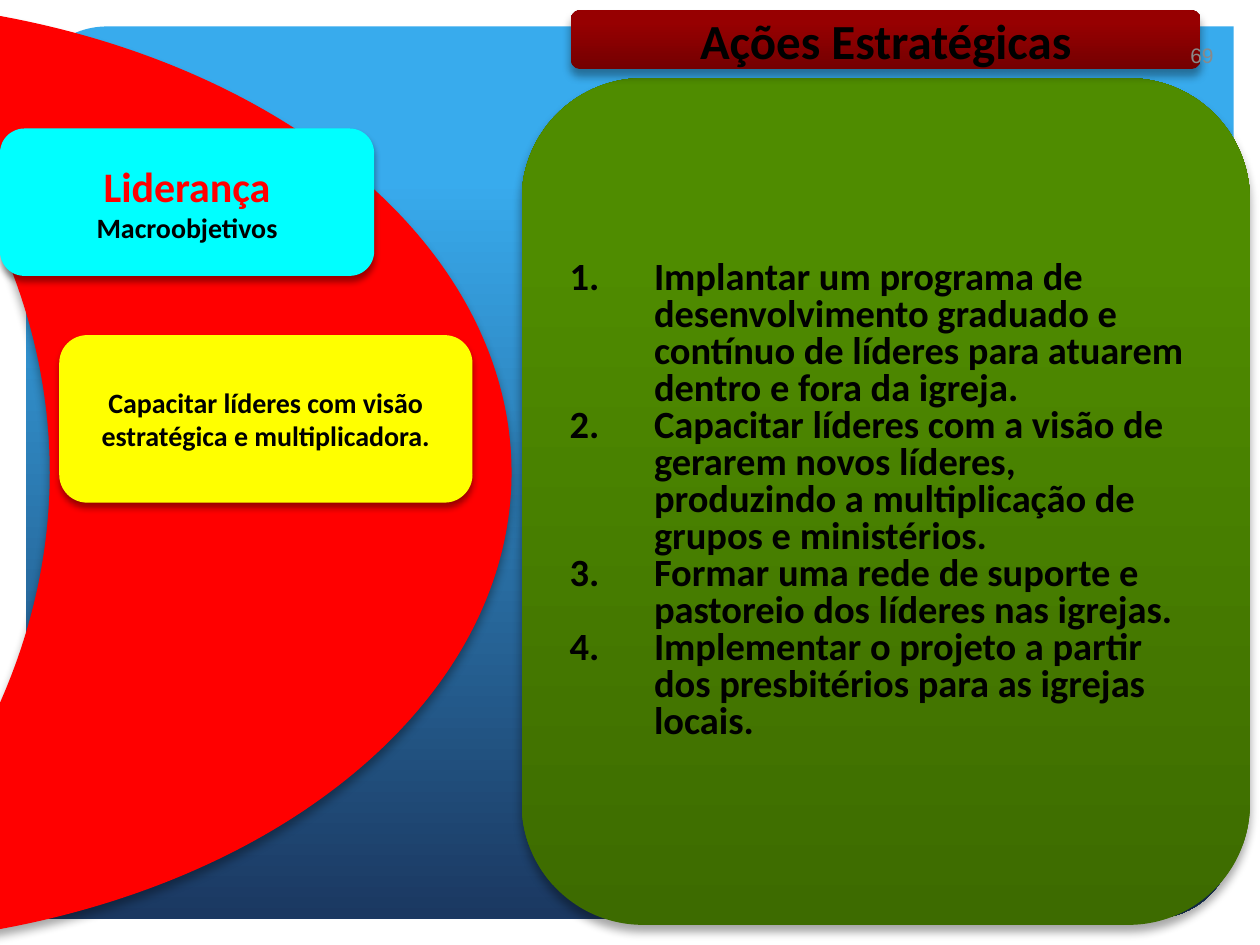
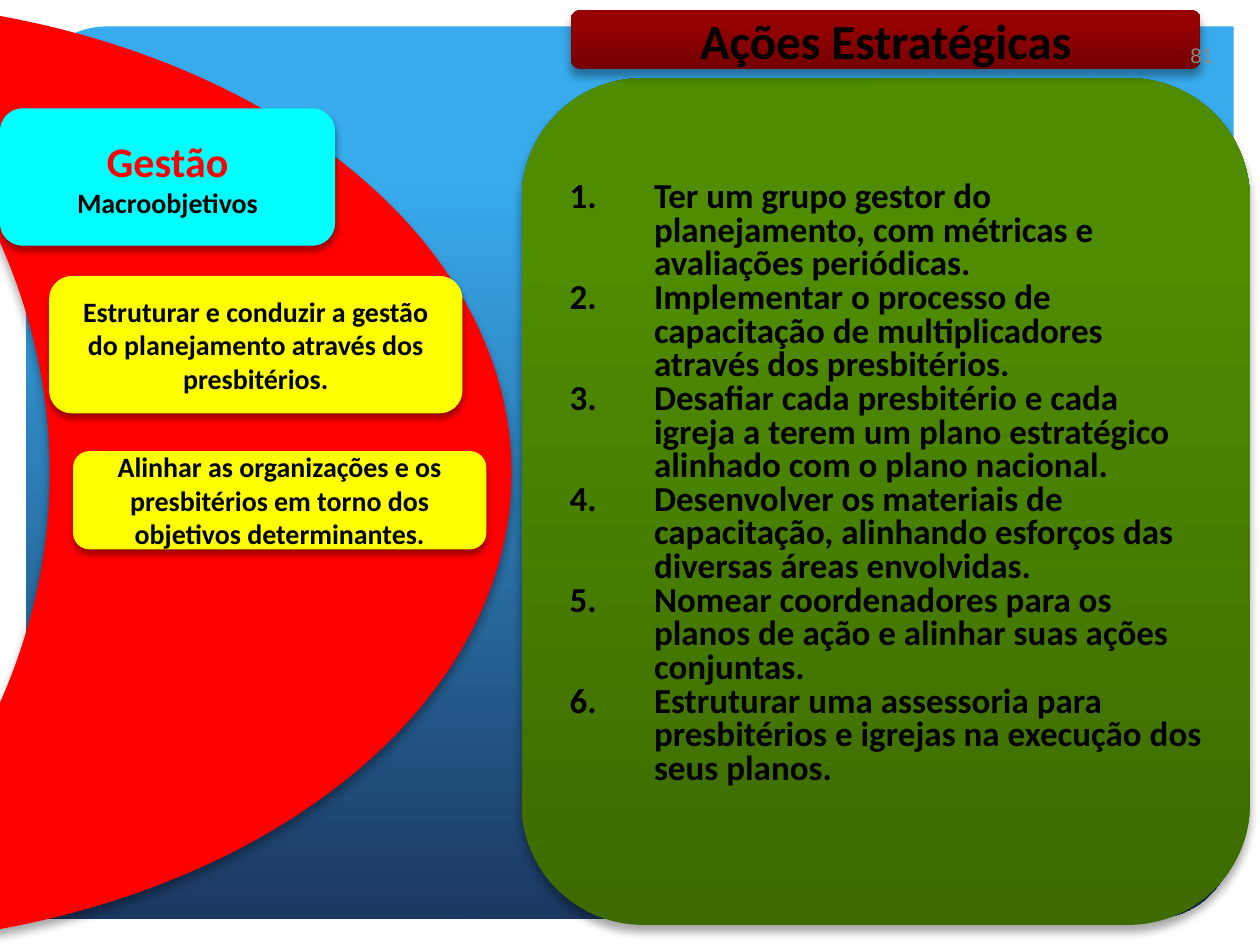
from lxml import etree
from pptx import Presentation
from pptx import util as u
from pptx.dml.color import RGBColor
from pptx.enum import shapes, text
from pptx.oxml.ns import qn

# Each slide: page number, theme box, goal boxes (left, top, width, height) and actions
SLIDES = [
    dict(
        page="69", theme="Liderança", theme_box=(0, 1.02, 2.97, 1.17),
        goals=[("Capacitar líderes com visão estratégica e multiplicadora.", (0.47, 2.66, 3.28, 1.33))],
        action_size=22, spare_bottom=0,
        actions=[
            "Implantar um programa de desenvolvimento graduado e contínuo de líderes para atuarem dentro e fora da igreja.",
            "Capacitar líderes com a visão de gerarem novos líderes, produzindo a multiplicação de grupos e ministérios.",
            "Formar uma rede de suporte e pastoreio dos líderes nas igrejas.",
            "Implementar o projeto a partir dos presbitérios para as igrejas locais.",
        ],
    ),
    dict(
        page="81", theme="Gestão", theme_box=(0, 0.86, 2.66, 1.09),
        goals=[
            ("Estruturar e conduzir a gestão do planejamento através dos presbitérios.", (0.39, 2.19, 3.28, 1.09)),
            ("Alinhar as organizações e os presbitérios em torno dos objetivos determinantes.", (0.58, 3.58, 3.28, 0.78)),
        ],
        action_size=20, spare_bottom=0.27,
        actions=[
            "Ter um grupo gestor do planejamento, com métricas e avaliações periódicas.",
            "Implementar o processo de capacitação de multiplicadores através dos presbitérios.",
            "Desafiar cada presbitério e cada igreja a terem um plano estratégico alinhado com o plano nacional.",
            "Desenvolver os materiais de capacitação, alinhando esforços das diversas áreas envolvidas.",
            "Nomear coordenadores para os planos de ação e alinhar suas ações conjuntas.",
            "Estruturar uma assessoria para presbitérios e igrejas na execução dos seus planos.",
        ],
    ),
]
HEADING = "Ações Estratégicas"
SUBHEADING = "Macroobjetivos"

WIDTH, HEIGHT = 10, 7.5
MARGIN = 0.21
INDENT = 0.67
BLACK = RGBColor(0x00, 0x00, 0x00)
RED = RGBColor(0xFF, 0x00, 0x00)
CYAN = RGBColor(0x00, 0xFF, 0xFF)
YELLOW = RGBColor(0xFF, 0xFF, 0x00)
GREY = RGBColor(0x89, 0x89, 0x89)
SKY, NAVY = RGBColor(0x38, 0xAB, 0xED), RGBColor(0x1B, 0x38, 0x61)
DARK_GREEN, GREEN = RGBColor(0x3D, 0x6B, 0x00), RGBColor(0x4F, 0x8C, 0x00)
DARK_WINE, WINE = RGBColor(0x74, 0x00, 0x01), RGBColor(0x97, 0x00, 0x01)

# Gradients: two (share, colour) stops and a counter-clockwise angle
BLUE_FADE = ((0.17, SKY), (1, NAVY), 270)
GREEN_FADE = ((0, DARK_GREEN), (0.8, GREEN), 90)
WINE_FADE = ((0, DARK_WINE), (0.8, WINE), 90)
# Shadows: opacity in percent, blur and distance in points
DEEP, SOFT = (35, 5, 4), (40, 4, 3)


def add_shadow(sp, opacity, blur, distance):
    effects = sp._element.spPr.find(qn("a:effectLst"))
    outer = etree.SubElement(effects, qn("a:outerShdw"), blurRad=str(u.Pt(blur)),
                             dist=str(u.Pt(distance)), dir="5400000", rotWithShape="0")
    color = etree.SubElement(outer, qn("a:srgbClr"), val=str(BLACK))
    etree.SubElement(color, qn("a:alpha"), val=str(opacity * 1000))


def add_box(s, kind, box, fill, shadow=None):
    """Add a borderless shape; fill is a colour or a gradient tuple."""
    sp = s.shapes.add_shape(kind, *map(u.Inches, box))
    sp.shadow.inherit = False
    sp.line.fill.background()
    if isinstance(fill, RGBColor):
        sp.fill.solid()
        sp.fill.fore_color.rgb = fill
    else:
        *stops, angle = fill
        sp.fill.gradient()
        sp.fill.gradient_angle = angle
        for stop, (position, color) in zip(sp.fill.gradient_stops, stops):
            stop.position, stop.color.rgb = position, color
    if shadow:
        add_shadow(sp, *shadow)
    return sp


def add_text(sp, content, size=16, color=BLACK, bold=True, font="Calibri",
             align=text.PP_ALIGN.CENTER, numbered=False):
    """Write one paragraph, after any that the shape already holds."""
    tf = sp.text_frame
    tf.word_wrap = True
    tf.vertical_anchor = text.MSO_ANCHOR.MIDDLE
    p = tf.add_paragraph() if tf.text else tf.paragraphs[0]
    p.alignment = align
    if numbered:
        p.line_spacing = 0.8
        pPr = p._p.get_or_add_pPr()
        pPr.set("marL", str(u.Inches(INDENT)))
        pPr.set("indent", str(-u.Inches(INDENT)))
        etree.SubElement(pPr, qn("a:buFont"), typeface="+mj-lt")
        etree.SubElement(pPr, qn("a:buAutoNum"), type="arabicPeriod")
    r = p.add_run()
    r.text = content
    r.font.size, r.font.name, r.font.bold = u.Pt(size), font, bold
    r.font.color.rgb = color


def add_backdrop(s):
    kind = shapes.MSO_SHAPE
    panel = add_box(s, kind.ROUND_2_DIAG_RECTANGLE,
                    (MARGIN, MARGIN, WIDTH - 2 * MARGIN, HEIGHT - 2 * MARGIN), BLUE_FADE)
    panel.adjustments[0] = 0.09
    moon = add_box(s, kind.MOON, (-1.41, 0, 5.47, HEIGHT), RED, DEEP)
    moon.rotation = 180
    moon.adjustments[0] = 0.67


def build_slide(prs, data):
    s = prs.slides.add_slide(prs.slide_layouts[6])
    rounded = shapes.MSO_SHAPE.ROUNDED_RECTANGLE
    add_backdrop(s)

    actions = add_box(s, rounded, (4.14, 0.62, 5.78, 6.72), GREEN_FADE, DEEP)
    actions.text_frame.margin_bottom = u.Inches(0.05 + data["spare_bottom"])
    for action in data["actions"]:
        add_text(actions, action, size=data["action_size"],
                 align=text.PP_ALIGN.LEFT, numbered=True)

    heading = add_box(s, rounded, (4.53, 0.08, 5, 0.47), WINE_FADE, DEEP)
    add_text(heading, HEADING, size=28)

    theme = add_box(s, rounded, data["theme_box"], CYAN, SOFT)
    add_text(theme, data["theme"], size=24, color=RED)
    add_text(theme, SUBHEADING)

    for goal, box in data["goals"]:
        add_text(add_box(s, rounded, box, YELLOW, SOFT), goal)

    page = s.shapes.add_textbox(*map(u.Inches, (9.19, 0.24, 0.54, 0.4)))
    add_text(page, data["page"], size=12, color=GREY, bold=False, font="Arial",
             align=text.PP_ALIGN.RIGHT)


def main():
    prs = Presentation()
    prs.slide_width, prs.slide_height = u.Inches(WIDTH), u.Inches(HEIGHT)
    for data in SLIDES:
        build_slide(prs, data)
    prs.save("out.pptx")


if __name__ == "__main__":
    main()
